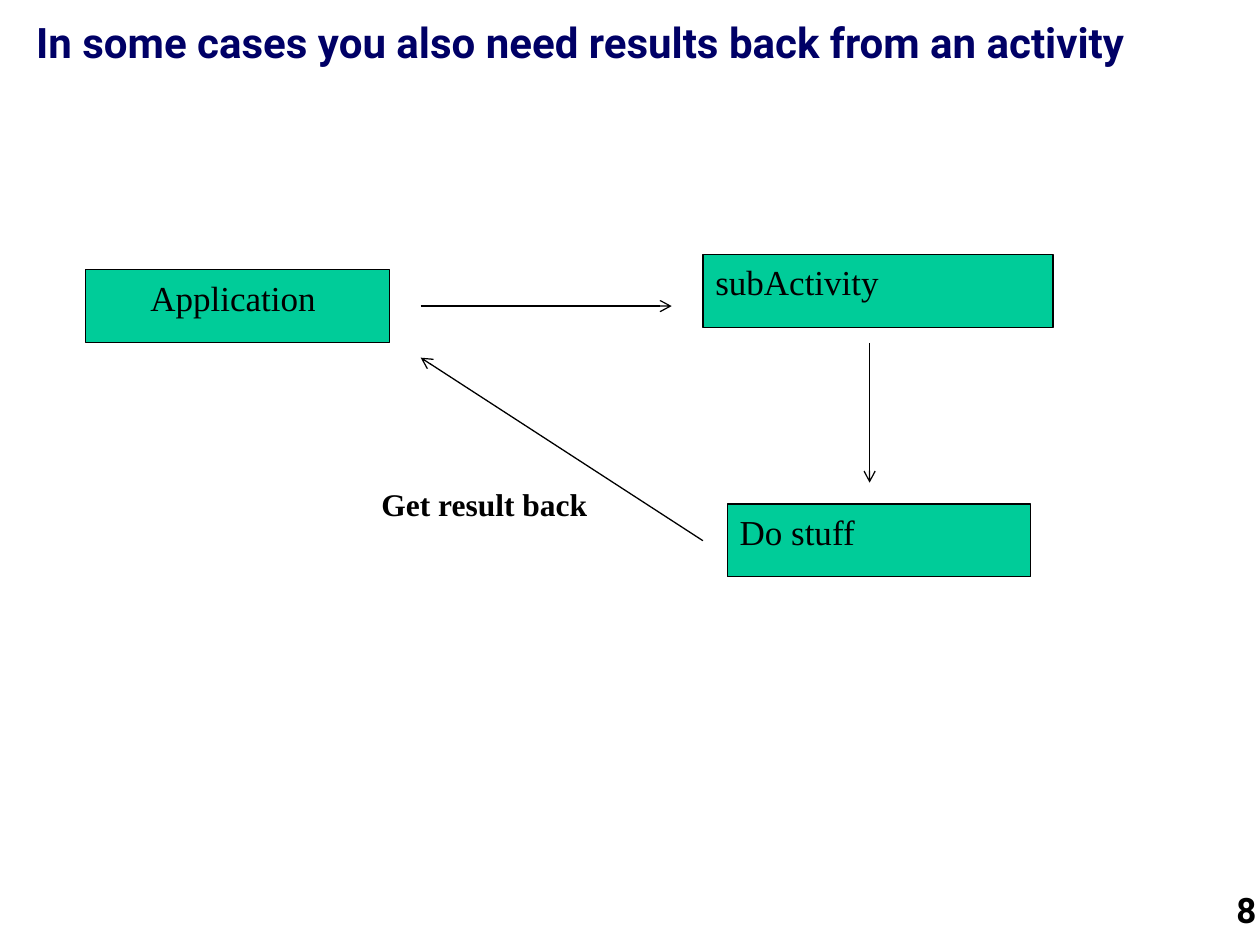
from dataclasses import dataclass

from lxml import etree
from pptx import Presentation
from pptx.dml.color import RGBColor
from pptx.enum.shapes import MSO_CONNECTOR, MSO_SHAPE
from pptx.enum.text import MSO_ANCHOR, MSO_AUTO_SIZE, PP_ALIGN
from pptx.oxml.ns import qn
from pptx.util import Cm, Pt

RECTANGLE = MSO_SHAPE.RECTANGLE
STRAIGHT = MSO_CONNECTOR.STRAIGHT
TOP = MSO_ANCHOR.TOP
FIT_SHAPE = MSO_AUTO_SIZE.SHAPE_TO_FIT_TEXT
LEFT, RIGHT = PP_ALIGN.LEFT, PP_ALIGN.RIGHT
BLANK_LAYOUT = 6


@dataclass(frozen=True)
class Theme:
    """Colours, fonts and sizes of the slide."""
    ink: RGBColor = RGBColor(0x00, 0x00, 0x00)
    title: RGBColor = RGBColor(0x00, 0x00, 0x66)
    step: RGBColor = RGBColor(0x00, 0xCC, 0x99)
    sans: str = "Roboto"
    serif: str = "Times New Roman"
    title_size: int = 24
    body_size: int = 20
    label_size: int = 18
    line_width: float = 0.75


THEME = Theme()


def write_text(box, text, *, font=THEME.serif, size=THEME.body_size, color=THEME.ink,
               bold=False, align=LEFT, indent=0, wrap=True):
    """Put one formatted paragraph at the top of a box."""
    frame = box.text_frame
    frame.word_wrap = wrap
    frame.vertical_anchor = TOP
    frame.margin_left = Cm(0.25 + indent)
    para = frame.paragraphs[0]
    para.alignment = align
    span = para.add_run()
    span.text = text
    span.font.name = font
    span.font.size = Pt(size)
    span.font.bold = bold
    span.font.color.rgb = color


def add_text(page, text, left, top, width, height, **style):
    """Add a text box and return it."""
    box = page.shapes.add_textbox(Cm(left), Cm(top), Cm(width), Cm(height))
    write_text(box, text, **style)
    return box


def add_step(page, text, left, top, width=6.12, indent=0):
    """Add a green step of the flow."""
    box = page.shapes.add_shape(RECTANGLE, Cm(left), Cm(top), Cm(width), Cm(1.47))
    box.shadow.inherit = False
    box.fill.solid()
    box.fill.fore_color.rgb = THEME.step
    box.line.color.rgb = THEME.ink
    box.line.width = Pt(THEME.line_width)
    write_text(box, text, indent=indent)


def add_arrow(page, start, end):
    """Draw a thin line with an open arrowhead at its end."""
    arrow = page.shapes.add_connector(STRAIGHT, *map(Cm, start + end))
    arrow.line.color.rgb = THEME.ink
    arrow.line.width = Pt(THEME.line_width)
    etree.SubElement(arrow.line._get_or_add_ln(), qn("a:tailEnd"), type="arrow")
    etree.SubElement(arrow._element.spPr, qn("a:effectLst"))


def main():
    """Build the activity result slide."""
    deck = Presentation()
    deck.slide_width, deck.slide_height = Cm(25.4), Cm(19.05)
    page = deck.slides.add_slide(deck.slide_layouts[BLANK_LAYOUT])

    add_text(page, "8", 17.53, 17.78, 8.05, 1.27, font=THEME.sans, bold=True, align=RIGHT)
    add_text(page, "In some cases you also need results back from an activity",
             0.48, 0.2, 24.66, 2.54, font=THEME.sans, size=THEME.title_size,
             color=THEME.title, bold=True)

    add_step(page, "Application", 1.73, 5.44, indent=1.05)
    add_step(page, "subActivity", 14.17, 5.13, width=7.06)
    add_step(page, "Do stuff", 14.66, 10.16)

    add_arrow(page, (8.48, 6.17), (13.54, 6.17))
    add_arrow(page, (17.53, 6.91), (17.53, 9.73))
    add_arrow(page, (14.17, 10.9), (8.48, 7.21))

    label = add_text(page, "Get result back", 7.44, 9.65, 4.7, 1.02,
                     size=THEME.label_size, bold=True, wrap=False)
    label.text_frame.auto_size = FIT_SHAPE

    deck.save("out.pptx")


if __name__ == "__main__":
    main()
